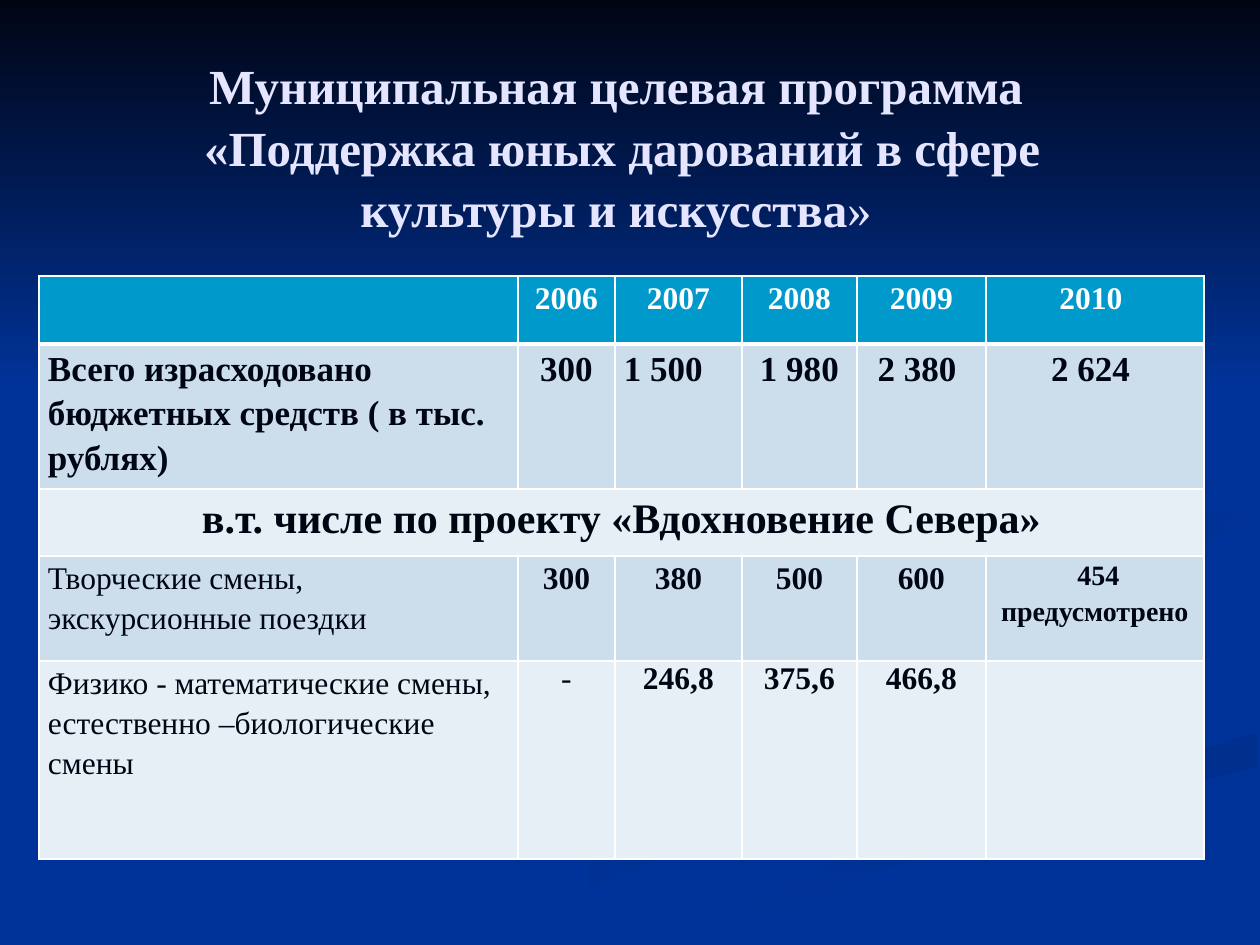
from lxml.etree import SubElement
from pptx import Presentation
from pptx.dml.color import RGBColor
from pptx.enum.text import MSO_ANCHOR, PP_ALIGN
from pptx.oxml.ns import qn
from pptx.util import Pt

PX = 914400 // 126
EMU_PER_INCH = 914400
FONT = "Times New Roman"

BLUE = RGBColor(0x00, 0x33, 0x99)
NIGHT = RGBColor(0x00, 0x05, 0x14)
DUSK = RGBColor(0x00, 0x31, 0x93)
DEEP = RGBColor(0x00, 0x2F, 0x8D)
LILAC = RGBColor(0xE5, 0xE5, 0xFF)
WHITE = RGBColor(0xFF, 0xFF, 0xFF)
HEADER = RGBColor(0x00, 0x99, 0xCC)
BAND = RGBColor(0xCC, 0xDE, 0xEC)
PALE = RGBColor(0xE7, 0xEF, 0xF6)

# Each ribbon: first colour, last colour, clockwise gradient angle, outline in px
RIBBONS = [
    (BLUE, DUSK, 0, [
        (984, 697), (773, 625), (724, 578), (747, 619), (984, 701), (944, 748),
        (629, 833), (378, 944), (455, 944), (711, 838), (983, 762), (1008, 732)]),
    (BLUE, DUSK, 45, [
        (1188, 718), (1096, 668), (955, 627), (912, 585), (940, 630), (1124, 697),
        (1157, 732), (1126, 762), (1186, 732)]),
    (DEEP, BLUE, 90, [
        (634, 944), (719, 944), (876, 872), (1034, 820), (1257, 767), (1257, 732),
        (1092, 781), (877, 843), (717, 906)]),
    (BLUE, BLUE, 0, [
        (913, 585), (956, 627), (1140, 680), (1188, 718), (1124, 762), (887, 825),
        (601, 944), (654, 941), (877, 843), (1259, 732), (1259, 678), (1048, 627),
        (984, 583), (1071, 538), (1259, 507), (1259, 488), (993, 532)]),
    (DEEP, BLUE, 45, [
        (984, 580), (1041, 625), (1015, 590), (1106, 553), (1257, 529), (1257, 507),
        (1090, 534)]),
    (DEEP, BLUE, 45, [
        (861, 542), (1040, 507), (1125, 422), (1076, 357), (960, 294), (1066, 351),
        (1120, 422), (1046, 481), (803, 533), (728, 590), (784, 630), (757, 575)]),
    (NIGHT, BLUE, 90, [(0, 0), (1260, 0), (1260, 388), (0, 388)]),
]

COLUMNS = [479, 97, 127, 115, 129, 218]
# Each row: height, fill, line spacing, label format, value format, texts
ROWS = [
    (68, HEADER, 1.15, {}, {"size": Pt(18), "bold": True, "color": WHITE},
     ["", "2006", "2007", "2008", "2009", "2010 "]),
    (133, BAND, 1.15, {"size": Pt(20), "bold": True}, {"size": Pt(20), "bold": True},
     ["Всего израсходовано бюджетных средств ( в тыс. рублях)",
      "300", "1 500", "1 980", "2 380 ", "2 624 "]),
    (67, PALE, 1.15, {"size": Pt(24), "bold": True}, {},
     ["в.т. числе по проекту «Вдохновение Севера»"]),
    (105, BAND, 1.15, {"size": Pt(18), "bold": False}, {"size": Pt(18), "bold": True},
     ["Творческие смены,\nэкскурсионные поездки", "300", "380", "500", "600",
      " 454\nпредусмотрено"]),
    (198, PALE, 1.0, {"size": Pt(18), "bold": False}, {"size": Pt(18), "bold": True},
     ["Физико - математические смены,\nестественно –биологические смены",
      "-", "246,8", "375,6", "466,8", ""]),
]


def format_font(font, values):
    for name, value in {"name": FONT, "color": NIGHT, **values}.items():
        if name == "color":
            font.color.rgb = value
        else:
            setattr(font, name, value)


def draw_background(slide, left, top):
    slide.background.fill.solid()
    slide.background.fill.fore_color.rgb = BLUE
    for first, last, angle, outline in RIBBONS:
        points = [(left + x, top + y) for x, y in outline]
        builder = slide.shapes.build_freeform(*points[0], scale=PX)
        builder.add_line_segments(points[1:], close=True)
        ribbon = builder.convert_to_shape()
        ribbon.shadow.inherit = False
        ribbon.line.fill.background()
        ribbon.fill.gradient()
        ribbon.fill.gradient_angle = -angle % 360
        for stop, color in zip(ribbon.fill.gradient_stops, (first, last)):
            stop.color.rgb = color


def draw_title(slide, left, top, width, height):
    title = slide.shapes.add_textbox(left * PX, top * PX, width * PX, height * PX)
    frame = title.text_frame
    frame.word_wrap = True
    frame.vertical_anchor = MSO_ANCHOR.MIDDLE
    heading = frame.paragraphs[0]
    heading.alignment = PP_ALIGN.CENTER
    heading.line_spacing = 1.05
    lines = ("Муниципальная целевая программа\n «Поддержка юных дарований в сфере\n"
             "культуры и искусства")
    for text, bold in ((lines, True), ("»", False)):
        for number, part in enumerate(text.split("\n")):
            if number:
                heading.add_line_break()
            run = heading.add_run()
            run.text = part
            format_font(run.font, {"size": Pt(28), "bold": bold, "color": LILAC})


def add_borders(cell, bottom_width):
    """Draw white borders; call before the fill is set, as the schema orders them."""
    properties = cell._tc.get_or_add_tcPr()
    for side, width in (("L", 1), ("R", 1), ("T", 1), ("B", bottom_width)):
        border = SubElement(properties, qn(f"a:ln{side}"), w=str(Pt(width)))
        SubElement(SubElement(border, qn("a:solidFill")), qn("a:srgbClr"), val=str(WHITE))


def write_cell(cell, text, alignment, spacing, values):
    cell.margin_left = cell.margin_right = 9 * PX
    cell.margin_top = cell.margin_bottom = 0
    cell.text = text
    for paragraph in cell.text_frame.paragraphs:
        paragraph.alignment = alignment
        paragraph.line_spacing = spacing
        for run in paragraph.runs:
            format_font(run.font, values)


def draw_spending_table(slide, left, top):
    height = sum(row[0] for row in ROWS)
    table = slide.shapes.add_table(len(ROWS), len(COLUMNS), left * PX, top * PX,
                                   sum(COLUMNS) * PX, height * PX).table
    for column, width in zip(table.columns, COLUMNS):
        column.width = width * PX
    for r, (row_height, fill, spacing, label, value, texts) in enumerate(ROWS):
        table.rows[r].height = row_height * PX
        for c in range(len(COLUMNS)):
            cell = table.cell(r, c)
            add_borders(cell, 3 if r == 0 else 1)
            cell.fill.solid()
            cell.fill.fore_color.rgb = fill
        if len(texts) == 1:
            table.cell(r, 0).merge(table.cell(r, len(COLUMNS) - 1))
        for c, text in enumerate(texts):
            values = value if c else label
            if "\n" in text and c:
                values = {**values, "size": Pt(16)}
            elif text == "-":
                values = {**values, "bold": False}
            starts_left = (c == 0 and len(texts) > 1) or text == "1 500"
            alignment = PP_ALIGN.LEFT if starts_left else PP_ALIGN.CENTER
            line_spacing = spacing if c else 1.15
            write_cell(table.cell(r, c), text, alignment, line_spacing, values)


def main():
    presentation = Presentation()
    presentation.slide_width = 10 * EMU_PER_INCH
    presentation.slide_height = 15 * EMU_PER_INCH // 2
    slide = presentation.slides.add_slide(presentation.slide_layouts[6])
    draw_background(slide, 0, 0)
    draw_title(slide, 49, 52, 1134, 186)
    draw_spending_table(slide, 39, 276)
    presentation.save("out.pptx")


if __name__ == "__main__":
    main()
